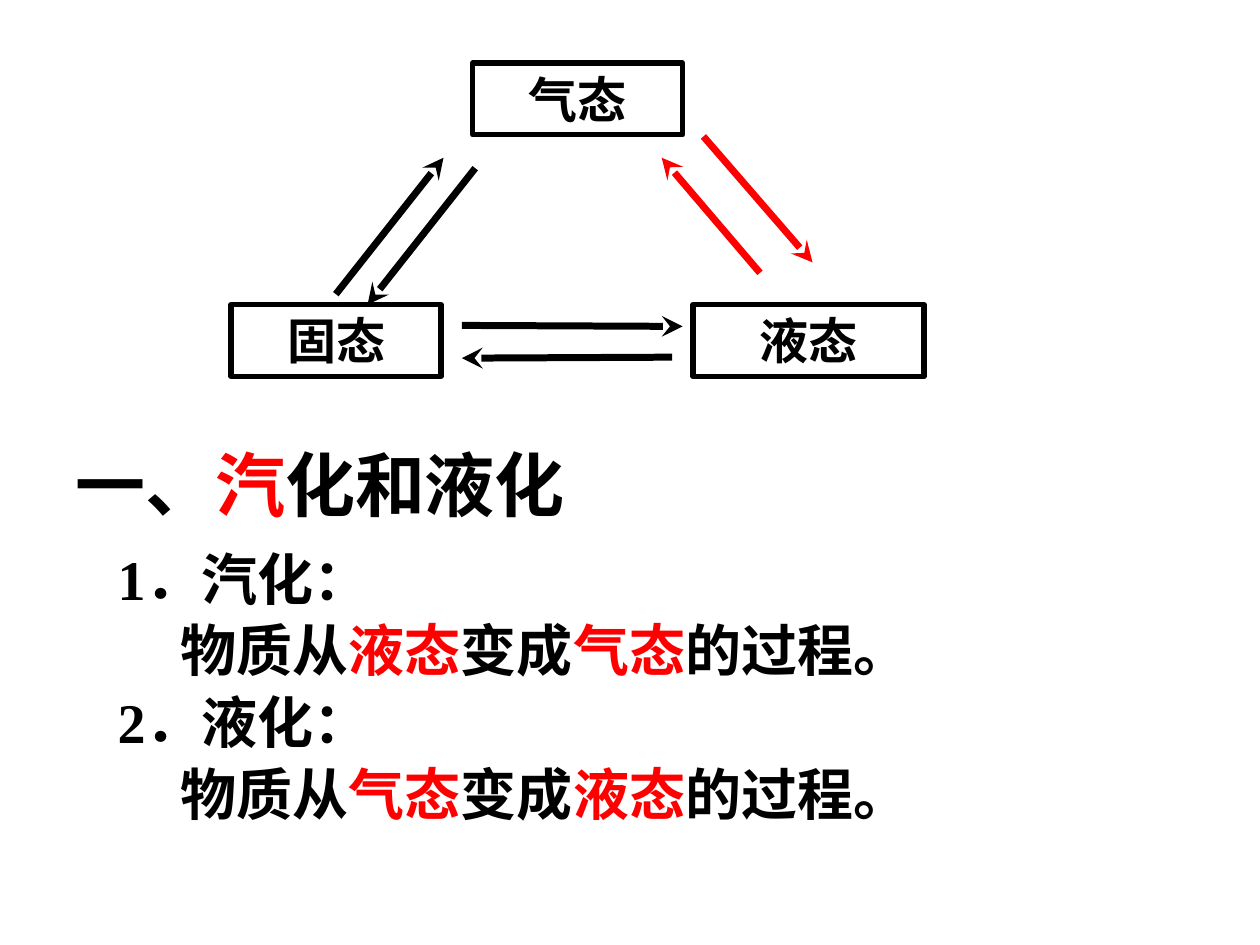
from lxml import etree
from pptx import Presentation
from pptx.dml.color import RGBColor
from pptx.enum.shapes import MSO_CONNECTOR, MSO_SHAPE
from pptx.enum.text import MSO_ANCHOR, PP_ALIGN
from pptx.oxml.ns import qn
from pptx.util import Cm, Pt

RECTANGLE = MSO_SHAPE.RECTANGLE
STRAIGHT = MSO_CONNECTOR.STRAIGHT
MIDDLE, TOP = MSO_ANCHOR.MIDDLE, MSO_ANCHOR.TOP
CENTER = PP_ALIGN.CENTER

FONT = "Times New Roman"
COLORS = {"black": "000000", "red": "FF0000"}

# State boxes: text, left, top, width (cm)
BOX_HEIGHT = 1.45
STATES = [
    ("固态", 4.66, 6.14, 4.23),
    ("气态", 9.53, 1.27, 4.23),
    ("液态", 13.97, 6.14, 4.66),
]

# Transition arrows: start, end (cm), colour
ARROWS = [
    ((6.77, 5.93), (8.94, 3.18), "black"),
    ((9.58, 3.39), (7.41, 6.14), "black"),
    ((9.31, 6.56), (13.76, 6.58), "black"),
    ((13.55, 7.2), (9.31, 7.22), "black"),
    ((15.32, 5.5), (13.34, 3.18), "red"),
    ((14.18, 2.75), (16.38, 5.29), "red"),
]

# Spans between asterisks are red
TITLE = "一、*汽*化和液化"
DEFINITIONS = [
    ("1．汽化：", "物质从*液态*变成*气态*的过程。"),
    ("2．液化：", "物质从*气态*变成*液态*的过程。"),
]


def color(name):
    return RGBColor.from_string(COLORS[name])


def style_span(span, size, name="black"):
    span.font.name = FONT
    span.font.size = Pt(size)
    span.font.bold = True
    span.font.color.rgb = color(name)


def add_spans(para, marked_text, size):
    for index, part in enumerate(marked_text.split("*")):
        span = para.add_run()
        span.text = part
        style_span(span, size, "red" if index % 2 else "black")


def add_text_box(page, left, top, width, height, anchor):
    box = page.shapes.add_textbox(Cm(left), Cm(top), Cm(width), Cm(height))
    frame = box.text_frame
    frame.word_wrap = True
    frame.vertical_anchor = anchor
    return frame


def format_outline_para(para, level, margin, indent):
    para.level = level
    para.line_spacing = 0.9
    para.space_before = Pt(6.4)
    properties = para._p.get_or_add_pPr()
    properties.set("marL", str(Cm(margin)))
    properties.set("indent", str(Cm(indent)))


def add_definitions(page):
    frame = add_text_box(page, 2.12, 11, 18.63, 6.14, TOP)
    para = frame.paragraphs[0]
    for number, (term, meaning) in enumerate(DEFINITIONS):
        if number:
            para = frame.add_paragraph()
        format_outline_para(para, 0, 1.69, -1.69)
        add_spans(para, term, 32)
        para = frame.add_paragraph()
        format_outline_para(para, 1, 2.75, -1.48)
        add_spans(para, meaning, 32)


def add_state(page, text, left, top, width):
    box = page.shapes.add_shape(
        RECTANGLE, Cm(left), Cm(top), Cm(width), Cm(BOX_HEIGHT))
    box.shadow.inherit = False
    box.fill.background()
    box.line.color.rgb = color("black")
    box.line.width = Pt(3)
    box.text_frame.text = text
    box.text_frame.vertical_anchor = TOP
    para = box.text_frame.paragraphs[0]
    para.alignment = CENTER
    style_span(para.runs[0], 28)


def add_arrow(page, start, end, name):
    arrow = page.shapes.add_connector(
        STRAIGHT, *(Cm(value) for value in start + end))
    arrow.line.color.rgb = color(name)
    arrow.line.width = Pt(4)
    etree.SubElement(arrow.line._get_or_add_ln(), qn("a:tailEnd"), type="stealth")
    etree.SubElement(arrow._element.spPr, qn("a:effectLst"))


def main():
    deck = Presentation()
    deck.slide_width, deck.slide_height = Cm(25.4), Cm(19.05)
    page = deck.slides.add_slide(deck.slide_layouts[6])

    # Heading and definitions
    title = add_text_box(page, 1.27, 8.47, 13.76, 2.54, MIDDLE)
    add_spans(title.paragraphs[0], TITLE, 40)
    add_definitions(page)

    # Diagram of the three states
    for state in STATES:
        add_state(page, *state)
    for arrow in ARROWS:
        add_arrow(page, *arrow)

    deck.save("out.pptx")


if __name__ == "__main__":
    main()
